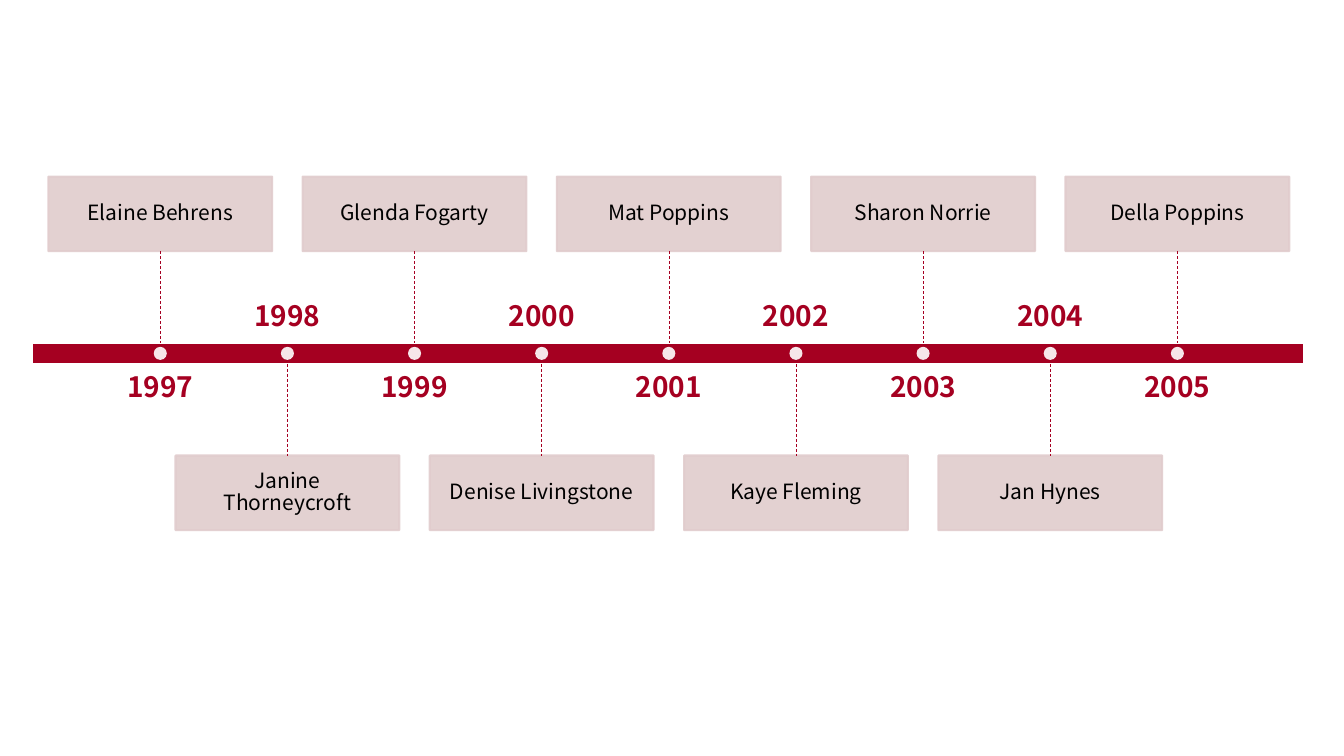
"""Build a timeline slide of names alternating above and below a bar of years."""
import pptx
import pptx.dml.color
import pptx.enum.dml
import pptx.enum.shapes
import pptx.enum.text
import pptx.oxml
import pptx.oxml.ns
import pptx.util

Cm = pptx.util.Cm
Pt = pptx.util.Pt
SHAPE = pptx.enum.shapes.MSO_SHAPE
ANCHOR = pptx.enum.text.MSO_ANCHOR

COLORS = {"accent": "A50021", "card": "E1CCCD", "white": "FFFFFF", "text": "000000"}
FONT = "Noto Sans CJK JP"
FIRST_YEAR = 1997
NAMES = [
    "Elaine Behrens", "Janine Thorneycroft", "Glenda Fogarty",
    "Denise Livingstone", "Mat Poppins", "Kaye Fleming",
    "Sharon Norrie", "Jan Hynes", "Della Poppins",
]
FIRST_X, STEP = 4.04, 3.204
BAR_LEFT, BAR_TOP, BAR_W, BAR_H = 0.81, 8.64, 32.05, 0.53
CARD_W, CARD_H = 5.64, 1.88
YEAR_W, YEAR_H = 5.13, 1.52
DOT = 0.33


def rgb(name):
    return pptx.dml.color.RGBColor.from_string(COLORS[name])


def set_alpha(s, percent):
    for clr in s._element.spPr.iter(pptx.oxml.ns.qn("a:srgbClr")):
        alpha = pptx.oxml.parse_xml(
            f'<a:alpha {pptx.oxml.ns.nsdecls("a")} val="{percent * 1000}"/>')
        clr.append(alpha)


def write(s, text, size, color="text", bold=False, anchor=ANCHOR.MIDDLE, inset=0):
    tf = s.text_frame
    tf.word_wrap = True
    tf.vertical_anchor = anchor
    tf.margin_left = tf.margin_right = tf.margin_top = tf.margin_bottom = Cm(inset)
    p = tf.paragraphs[0]
    p.alignment = pptx.enum.text.PP_ALIGN.CENTER
    p.line_spacing = 0.9
    r = p.add_run()
    r.text = text
    r.font.name = FONT
    r.font.size = Pt(size)
    r.font.bold = bold
    r.font.color.rgb = rgb(color)


def add_box(sp, kind, x, y, w, h, fill, line=None, alpha=None):
    s = sp.add_shape(kind, Cm(x), Cm(y), Cm(w), Cm(h))
    s.shadow.inherit = False
    s.fill.solid()
    s.fill.fore_color.rgb = rgb(fill)
    if line:
        s.line.color.rgb = rgb(line)
        s.line.width = Pt(1.5)
    else:
        s.line.fill.background()
    if alpha:
        set_alpha(s, alpha)
    return s


def add_card(sp, name, x, y):
    s = add_box(sp, SHAPE.RECTANGLE, x - CARD_W / 2, y, CARD_W, CARD_H,
                "card", line="card", alpha=90)
    write(s, name, 15, inset=0.41)


def add_year(sp, year, x, y, anchor):
    s = sp.add_textbox(Cm(x - YEAR_W / 2), Cm(y), Cm(YEAR_W), Cm(YEAR_H))
    write(s, str(year), 20, color="accent", bold=True, anchor=anchor)


def add_stem(sp, x, top, bottom):
    s = sp.add_connector(pptx.enum.shapes.MSO_CONNECTOR.STRAIGHT,
                         Cm(x), Cm(top), Cm(x), Cm(bottom))
    s.line.color.rgb = rgb("accent")
    s.line.width = Pt(0.5)
    s.line.dash_style = pptx.enum.dml.MSO_LINE.DASH
    s._element.spPr.append(
        pptx.oxml.parse_xml(f'<a:effectLst {pptx.oxml.ns.nsdecls("a")}/>'))


def add_entry(sp, i, name):
    x = FIRST_X + i * STEP
    year = FIRST_YEAR + i
    if i % 2 == 0:
        add_card(sp, name, x, 4.45)
        add_stem(sp, x, 4.45 + CARD_H, BAR_TOP)
        add_year(sp, year, x, 9.4, ANCHOR.TOP)
    else:
        add_card(sp, name, x, 11.48)
        add_stem(sp, x, BAR_TOP + BAR_H, 11.48)
        add_year(sp, year, x, 6.86, ANCHOR.BOTTOM)
    add_box(sp, SHAPE.OVAL, x - DOT / 2, BAR_TOP + (BAR_H - DOT) / 2, DOT, DOT,
            "white", alpha=90)


def main():
    prs = pptx.Presentation()
    prs.slide_width, prs.slide_height = Cm(33.87), Cm(19.05)
    sp = prs.slides.add_slide(prs.slide_layouts[6]).shapes
    add_box(sp, SHAPE.RECTANGLE, BAR_LEFT, BAR_TOP, BAR_W, BAR_H, "accent", line="white")
    for i, name in enumerate(NAMES):
        add_entry(sp, i, name)
    prs.save("out.pptx")


if __name__ == "__main__":
    main()
